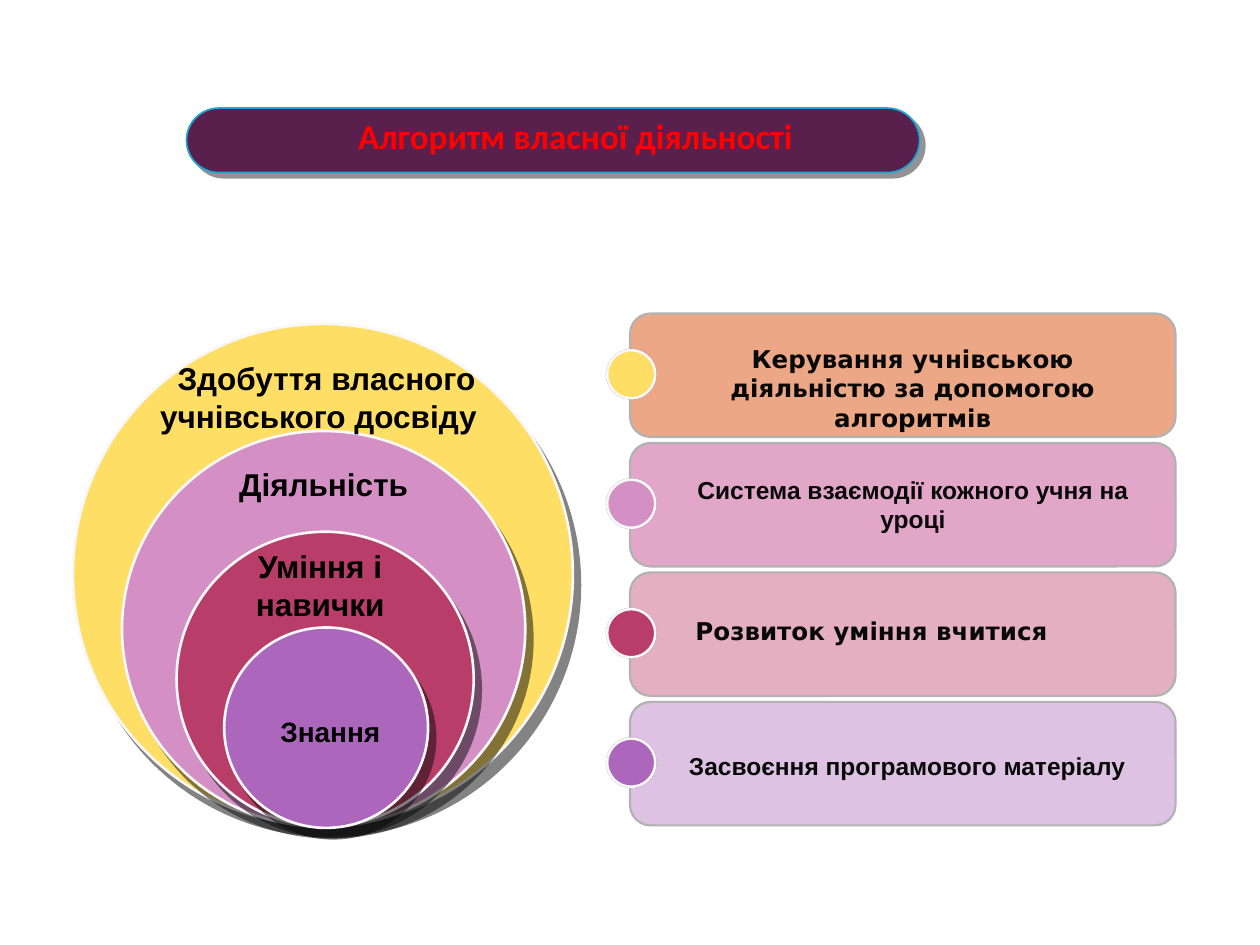
from lxml import etree
from pptx import Presentation
from pptx.dml.color import RGBColor
from pptx.enum.shapes import MSO_SHAPE as Preset
from pptx.enum.text import MSO_ANCHOR as Anchor, MSO_AUTO_SIZE as AutoSize, PP_ALIGN as Align
from pptx.oxml.ns import qn
from pptx.util import Cm, Pt

PLUM = RGBColor(0x59, 0x1F, 0x4D)
BLUE = RGBColor(0x1D, 0xA5, 0xD5)
RED = RGBColor(0xFF, 0x00, 0x00)
BLACK = RGBColor(0x00, 0x00, 0x00)
INK = RGBColor(0x08, 0x08, 0x08)
CHARCOAL = RGBColor(0x29, 0x29, 0x29)
GRAY = RGBColor(0xB2, 0xB2, 0xB2)
OFF_WHITE = RGBColor(0xF8, 0xF8, 0xF8)
YELLOW = RGBColor(0xFF, 0xDE, 0x66)
ORCHID = RGBColor(0xD4, 0x90, 0xC5)
CRIMSON = RGBColor(0xB8, 0x3D, 0x68)
VIOLET = RGBColor(0xAC, 0x66, 0xBB)
PEACH = RGBColor(0xEB, 0xA7, 0x86)
PINK = RGBColor(0xE2, 0xA7, 0xC8)
ROSE = RGBColor(0xE5, 0xAF, 0xC2)
LILAC = RGBColor(0xDE, 0xC2, 0xE4)


class SlideBuilder:
    font = "Arial"

    def __init__(self, slide):
        self.slide = slide

    def shape(self, preset, box, fill, line=None, width=1.0, parent=None):
        shapes = (parent or self.slide).shapes
        shape = shapes.add_shape(preset, *map(Cm, box))
        shape.shadow.inherit = False
        shape.fill.solid()
        shape.fill.fore_color.rgb = fill
        if line is None:
            shape.line.fill.background()
        else:
            shape.line.color.rgb = line
            shape.line.width = Pt(width)
        return shape

    def shadow(self, shape, color, distance, angle):
        """Add a half-transparent outer shadow; distance in points, angle in degrees."""
        effects = shape.element.spPr.find(qn("a:effectLst"))
        outer = etree.SubElement(effects, qn("a:outerShdw"), dist=str(int(Pt(distance))),
                                 dir=str(angle * 60000), algn="ctr", rotWithShape="0")
        tint = etree.SubElement(outer, qn("a:srgbClr"), val=str(color))
        etree.SubElement(tint, qn("a:alpha"), val="50000")

    def circle(self, box, fill, distance=0, angle=0, color=BLACK):
        circle = self.shape(Preset.OVAL, box, fill, OFF_WHITE, 1.5)
        self.shadow(circle, color, distance, angle)

    def fill_text(self, frame, lines, size, color, font=None, align=Align.CENTER,
                  spacing=None, indents=()):
        frame.word_wrap = True
        frame.auto_size = AutoSize.NONE
        frame.vertical_anchor = Anchor.TOP
        for index, line in enumerate(lines):
            paragraph = frame.add_paragraph() if index else frame.paragraphs[0]
            paragraph.alignment = align
            if spacing:
                paragraph.line_spacing = spacing
            if indents:
                paragraph._p.get_or_add_pPr().set("marL", str(int(Cm(indents[index]))))
            run = paragraph.add_run()
            run.text = line
            run.font.name = font or self.font
            run.font.size = Pt(size)
            run.font.bold = True
            run.font.color.rgb = color

    def text(self, box, lines, size, color, **style):
        self.fill_text(self.slide.shapes.add_textbox(*map(Cm, box)).text_frame,
                       lines, size, color, **style)

    def title(self, box, line, size, color, font):
        title = self.slide.shapes.title
        title.left, title.top, title.width, title.height = map(Cm, box)
        self.fill_text(title.text_frame, [line], size, color, font=font)
        # Bring the title in front of its banner
        title.element.getparent().append(title.element)


def main():
    presentation = Presentation()
    presentation.slide_width, presentation.slide_height = Cm(25.4), Cm(19.05)
    builder = SlideBuilder(presentation.slides.add_slide(presentation.slide_layouts[5]))

    # Title banner
    banner = builder.slide.shapes.add_group_shape()
    pill = builder.shape(Preset.ROUNDED_RECTANGLE, (3.76, 2.18, 14.78, 1.3), PLUM, BLUE,
                         parent=banner)
    pill.adjustments[0] = 0.5
    builder.shadow(pill, CHARCOAL, 4.2, 45)
    for left, rotation in ((17.83, 180), (3.86, 0)):
        moon = builder.shape(Preset.MOON, (left, 2.29, 0.66, 1.08), PLUM, parent=banner)
        moon.adjustments[0] = 0.22
        moon.rotation = rotation
    builder.title((5.16, 2.18, 12.88, 1.12), "Алгоритм власної діяльності", 20, RED, "Calibri")

    # Rows on the right: panel, dot, text
    sans = "DejaVu Sans"
    rows = [
        (PEACH, YELLOW, "Керування учнівською діяльністю за допомогою алгоритмів",
         (13.74, 6.81, 9.32, 1.45), {"font": sans}),
        (PINK, ORCHID, "Система взаємодії кожного учня на уроці",
         (13.54, 9.45, 9.73, 1.45), {}),
        (ROSE, CRIMSON, "Розвиток уміння вчитися",
         (13.77, 12.45, 9.32, 0.69), {"font": sans, "align": Align.LEFT, "spacing": 0.7}),
        (LILAC, VIOLET, "Засвоєння програмового матеріалу",
         (13.64, 15.01, 9.73, 0.86), {"align": Align.LEFT}),
    ]
    for index, (panel_fill, dot_fill, line, box, style) in enumerate(rows):
        top = 6.32 + index * 2.61
        builder.shape(Preset.ROUNDED_RECTANGLE, (12.7, top, 11, 2.49), panel_fill, GRAY, 1.25)
        builder.circle((12.24, top + 0.74, 0.97, 0.97), dot_fill)
        builder.text(box, [line], 14, INK, **style)

    # Nested circles, largest first
    circles = [
        ((1.47, 6.53, 10.08, 10.11), YELLOW),
        ((2.46, 8.69, 8.13, 7.98), ORCHID),
        ((3.56, 10.72, 5.99, 5.94), CRIMSON),
        ((4.52, 12.65, 4.11, 4.04), VIOLET),
    ]
    for box, fill in circles:
        builder.circle(box, fill, 7.2, 56, INK)

    # Circle labels
    builder.text((4.17, 14.27, 4.98, 0.94), ["Знання"], 16, BLACK)
    builder.text((3.84, 10.9, 5.23, 1.8), ["Уміння і навички"], 18, BLACK)
    builder.text((3.91, 9.25, 5.23, 1.02), ["Діяльність"], 18, BLACK)
    builder.text((2.46, 7.11, 9.09, 1.8), ["Здобуття власного", "учнівського досвіду"], 18, BLACK,
                 align=Align.LEFT, indents=(0.87, 0.52))

    presentation.save("out.pptx")


if __name__ == "__main__":
    main()
